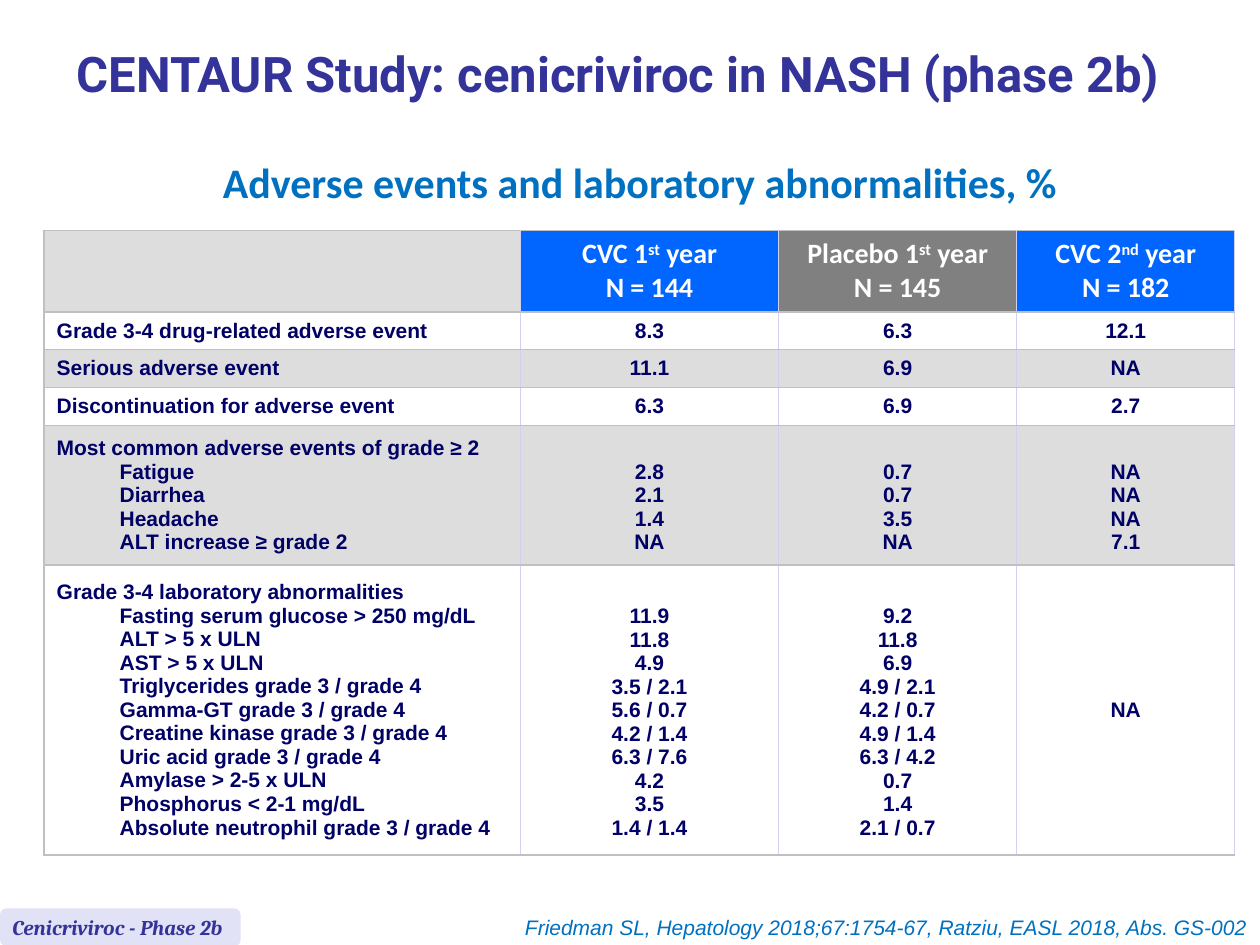
from pptx import Presentation
from pptx.dml.color import RGBColor
from pptx.enum.shapes import MSO_SHAPE
from pptx.enum.text import MSO_ANCHOR, PP_ALIGN
from pptx.oxml.ns import qn
from pptx.util import Inches, Pt
from lxml.etree import SubElement

COLORS = {
    "title": "333399", "accent": "0070C0", "body": "000066",
    "cvc": "0066FF", "placebo": "808080", "band": "DDDDDD", "white": "FFFFFF",
    "rule": "C0C0C0", "divider": "D0D0F0", "tag": "E2E2F6",
}
COL_WIDTHS = [3.78, 2.05, 1.89, 1.73]
ROW_HEIGHTS = [0.64, 0.3, 0.3, 0.3, 1.11, 2.3]
LINE_HEIGHT = 0.19

HEADERS = [
    ("CVC 1", "st", "N = 144", "cvc"),
    ("Placebo 1", "st", "N = 145", "placebo"),
    ("CVC 2", "nd", "N = 182", "cvc"),
]
ROWS = [
    (["Grade 3-4 drug-related adverse event"], ["8.3"], ["6.3"], ["12.1"]),
    (["Serious adverse event"], ["11.1"], ["6.9"], ["NA"]),
    (["Discontinuation for adverse event"], ["6.3"], ["6.9"], ["2.7"]),
    (["Most common adverse events of grade ≥ 2", "Fatigue", "Diarrhea",
      "Headache", "ALT increase ≥ grade 2"],
     ["2.8", "2.1", "1.4", "NA"],
     ["0.7", "0.7", "3.5", "NA"],
     ["NA", "NA", "NA", "7.1"]),
    (["Grade 3-4 laboratory abnormalities", "Fasting serum glucose > 250 mg/dL",
      "ALT > 5 x ULN", "AST > 5 x ULN", "Triglycerides grade 3 / grade 4",
      "Gamma-GT grade 3 / grade 4", "Creatine kinase grade 3 / grade 4",
      "Uric acid grade 3 / grade 4", "Amylase > 2-5 x ULN",
      "Phosphorus < 2-1 mg/dL", "Absolute neutrophil grade 3 / grade 4"],
     ["11.9", "11.8", "4.9", "3.5 / 2.1", "5.6 / 0.7", "4.2 / 1.4",
      "6.3 / 7.6", "4.2", "3.5", "1.4 / 1.4"],
     ["9.2", "11.8", "6.9", "4.9 / 2.1", "4.2 / 0.7", "4.9 / 1.4",
      "6.3 / 4.2", "0.7", "1.4", "2.1 / 0.7"],
     ["NA"]),
]


def rgb(name):
    return RGBColor.from_string(COLORS[name])


def set_font(p, name, size, color, bold=True, italic=False):
    f = p.font
    f.name, f.size, f.bold, f.italic = name, Pt(size), bold, italic
    f.color.rgb = rgb(color)


def add_text(s, box, text, font, align=PP_ALIGN.LEFT, wrap=True,
             anchor=MSO_ANCHOR.TOP, spacing=None):
    tf = s.shapes.add_textbox(*map(Inches, box)).text_frame
    tf.word_wrap = wrap
    tf.vertical_anchor = anchor
    p = tf.paragraphs[0]
    p.text = text
    p.alignment = align
    p.line_spacing = spacing
    set_font(p, *font)


def add_headings(s, box):
    left, top, width, height = box
    add_text(s, (left, top, width, 1.07),
             "CENTAUR Study: cenicriviroc in NASH (phase 2b)",
             ("Roboto", 28, "title"), anchor=MSO_ANCHOR.MIDDLE, spacing=0.85)
    add_text(s, (left + 0.99, top + height - 0.35, 7.16, 0.35),
             "Adverse events and laboratory abnormalities, %",
             ("Calibri", 24, "accent"), PP_ALIGN.CENTER, wrap=False,
             spacing=Pt(15.2))


def style_cell(cell, fill, first_column):
    cell.vertical_anchor = MSO_ANCHOR.MIDDLE
    tcPr = cell._tc.get_or_add_tcPr()
    edges = {"lnL": "rule" if first_column else "divider", "lnR": "divider",
             "lnT": "rule", "lnB": "rule"}
    for tag, color in edges.items():
        ln = SubElement(tcPr, qn("a:" + tag), w=str(Pt(1)))
        SubElement(SubElement(ln, qn("a:solidFill")), qn("a:srgbClr"),
                   val=COLORS[color])
    cell.fill.solid()
    cell.fill.fore_color.rgb = rgb(fill)


def fill_header(cell, label, ordinal, count):
    tf = cell.text_frame
    p = tf.paragraphs[0]
    for text in (label, ordinal, " year"):
        r = p.add_run()
        r.text = text
        if text == ordinal:
            r._r.get_or_add_rPr().set("baseline", "30000")
    tf.add_paragraph().text = count
    for p in tf.paragraphs:
        p.alignment = PP_ALIGN.CENTER
        p.line_spacing = Pt(19.6)
        set_font(p, "Calibri", 16, "white")


def fill_body(cell, lines, is_label):
    tf = cell.text_frame
    tf.text = "\n".join(lines)
    for i, p in enumerate(tf.paragraphs):
        if not is_label:
            p.alignment = PP_ALIGN.CENTER
        elif i:
            pPr = p._p.get_or_add_pPr()
            pPr.set("marL", str(Inches(0.5)))
            pPr.set("indent", "0")
        set_font(p, "Arial", 12, "body")
    if not is_label and len(lines) > 1:
        cell.margin_top = Inches(0.05 + LINE_HEIGHT)


def add_events_table(s, box):
    table = s.shapes.add_table(len(ROW_HEIGHTS), len(COL_WIDTHS),
                               *map(Inches, box)).table
    table.first_row = table.horz_banding = False
    for column, width in zip(table.columns, COL_WIDTHS):
        column.width = Inches(width)
    for row, height in zip(table.rows, ROW_HEIGHTS):
        row.height = Inches(height)
    style_cell(table.cell(0, 0), "band", True)
    for c, (label, ordinal, count, fill) in enumerate(HEADERS, 1):
        cell = table.cell(0, c)
        style_cell(cell, fill, False)
        fill_header(cell, label, ordinal, count)
    for r, row in enumerate(ROWS, 1):
        for c, lines in enumerate(row):
            cell = table.cell(r, c)
            style_cell(cell, "white" if r % 2 else "band", c == 0)
            fill_body(cell, lines, c == 0)


def add_footer(s, box):
    left, top, width, height = box
    tag_width, source_width = 1.91, 7.36
    tag = s.shapes.add_shape(MSO_SHAPE.ROUNDED_RECTANGLE,
                             *map(Inches, (left, top, tag_width, height)))
    tag.shadow.inherit = False
    tag.fill.solid()
    tag.fill.fore_color.rgb = rgb("tag")
    tag.line.fill.background()
    add_text(s, (left, top, tag_width, height), "Cenicriviroc - Phase 2b",
             ("Cambria", 12, "title", True, True))
    add_text(s, (left + width - source_width, top, source_width, height),
             "Friedman SL, Hepatology 2018;67:1754-67, Ratziu, EASL 2018, Abs. GS-002",
             ("Arial", 12, "accent", False, True), PP_ALIGN.RIGHT)


def main():
    prs = Presentation()
    prs.slide_width, prs.slide_height = Inches(10), Inches(7.5)
    s = prs.slides.add_slide(prs.slide_layouts[6])
    add_headings(s, (0.51, 0.08, 9.13, 1.65))
    add_events_table(s, (0.35, 1.83, sum(COL_WIDTHS), sum(ROW_HEIGHTS)))
    add_footer(s, (0, 7.21, 10, 0.3))
    prs.save("out.pptx")


if __name__ == "__main__":
    main()
